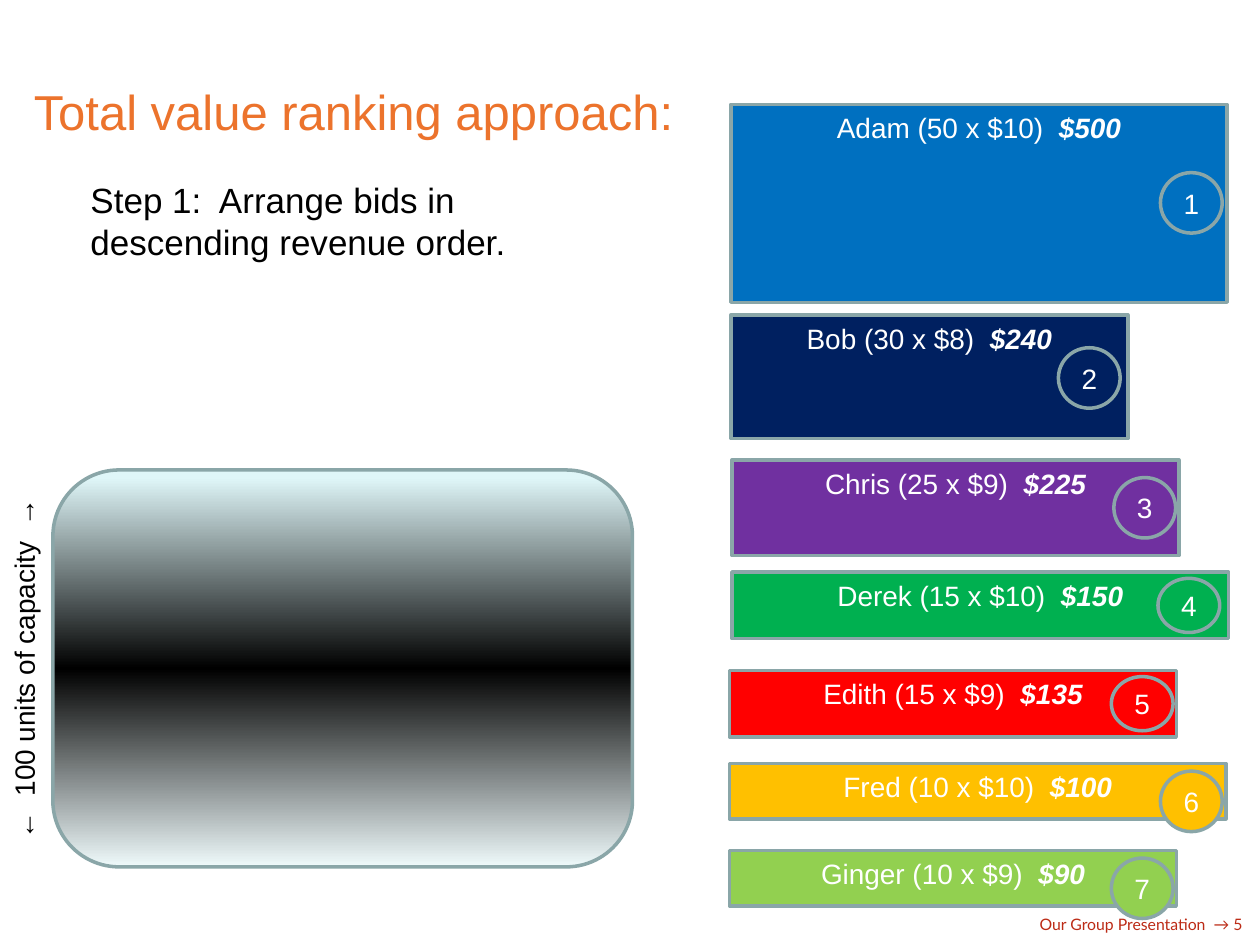
from copy import deepcopy
from dataclasses import dataclass

from pptx import Presentation
from pptx.dml.color import RGBColor
from pptx.enum.shapes import MSO_SHAPE
from pptx.enum.text import MSO_ANCHOR, PP_ALIGN
from pptx.oxml.ns import qn
from pptx.util import Inches, Pt

RECTANGLE, ROUNDED, OVAL = MSO_SHAPE.RECTANGLE, MSO_SHAPE.ROUNDED_RECTANGLE, MSO_SHAPE.OVAL
LEFT, CENTER, RIGHT = PP_ALIGN.LEFT, PP_ALIGN.CENTER, PP_ALIGN.RIGHT
TOP, MIDDLE, BOTTOM = MSO_ANCHOR.TOP, MSO_ANCHOR.MIDDLE, MSO_ANCHOR.BOTTOM


@dataclass(frozen=True)
class Theme:
    font: str = "Arial"
    footer_font: str = "Lato"
    title_size: int = 28
    body_size: int = 20
    label_size: int = 16
    footer_size: int = 9
    title: str = "EC732C"
    text: str = "000000"
    on_fill: str = "FFFFFF"
    outline: str = "8AA6A8"
    footer: str = "BC2B16"
    line_width: int = 2
    capacity_stops: tuple = ((0.02, "DFF6F8"), (0.5, "000000"), (1, "EFFAFB"))


@dataclass(frozen=True)
class Box:
    left: float
    top: float
    width: float
    height: float

    def inches(self) -> tuple:
        return tuple(Inches(n) for n in (self.left, self.top, self.width, self.height))


@dataclass(frozen=True)
class Bid:
    bidder: str
    quantity: int
    price: int
    color: str
    left: float
    top: float
    height: float
    badge_left: float
    badge_top: float
    badge_height: float = 0.48


THEME = Theme()
WIDTH_PER_DOLLAR = 0.394
BADGE_WIDTH = 0.49

BIDS = (
    Bid("Adam", 50, 10, "0070C0", 5.8, 0.83, 1.57, 9.21, 1.37),
    Bid("Bob", 30, 8, "002060", 5.8, 2.5, 0.98, 8.4, 2.76),
    Bid("Chris", 25, 9, "7030A0", 5.81, 3.65, 0.76, 8.84, 3.79),
    Bid("Derek", 15, 10, "00B050", 5.81, 4.54, 0.53, 9.19, 4.59, 0.43),
    Bid("Edith", 15, 9, "FF0000", 5.79, 5.32, 0.53, 8.82, 5.37, 0.43),
    Bid("Fred", 10, 10, "FFC000", 5.79, 6.06, 0.44, 9.21, 6.12),
    Bid("Ginger", 10, 9, "92D050", 5.79, 6.75, 0.44, 8.82, 6.81),
)


def rgb(color: str) -> RGBColor:
    return RGBColor.from_string(color)


def write(shape, text: str, size: int, color: str, align=LEFT, anchor=TOP, font=THEME.font):
    """Fill the shape's single paragraph and return it."""
    frame = shape.text_frame
    frame.word_wrap = True
    frame.vertical_anchor = anchor
    paragraph = frame.paragraphs[0]
    paragraph.alignment = align
    paragraph.add_run().text = text
    paragraph.font.name = font
    paragraph.font.size = Pt(size)
    paragraph.font.color.rgb = rgb(color)
    return paragraph


def add_outlined(shapes, kind, box: Box):
    shape = shapes.add_shape(kind, *box.inches())
    shape.shadow.inherit = False
    shape.line.color.rgb = rgb(THEME.outline)
    shape.line.width = Pt(THEME.line_width)
    return shape


def add_filled(shapes, kind, box: Box, color: str):
    shape = add_outlined(shapes, kind, box)
    shape.fill.solid()
    shape.fill.fore_color.rgb = rgb(color)
    return shape


def add_bid(slide, rank: int, bid: Bid) -> None:
    """Draw a bar as wide as its price, with the rank in a badge."""
    group = slide.shapes.add_group_shape()
    bar_box = Box(bid.left, bid.top, bid.price * WIDTH_PER_DOLLAR, bid.height)
    bar = add_filled(group.shapes, RECTANGLE, bar_box, bid.color)
    label = f"{bid.bidder} ({bid.quantity} x ${bid.price})  "
    paragraph = write(bar, label, THEME.label_size, THEME.on_fill, CENTER)
    total = paragraph.add_run()
    total.text = f"${bid.quantity * bid.price}"
    total.font.bold = total.font.italic = True

    badge_box = Box(bid.badge_left, bid.badge_top, BADGE_WIDTH, bid.badge_height)
    badge = add_filled(group.shapes, OVAL, badge_box, bid.color)
    write(badge, str(rank), THEME.label_size, THEME.on_fill, CENTER, MIDDLE)


def add_capacity(slide) -> None:
    block = add_outlined(slide.shapes, ROUNDED, Box(0.42, 3.73, 4.6, 3.15))
    block.fill.gradient()
    block.fill.gradient_angle = 270
    stop_list = block.fill._xPr.find(qn("a:gradFill")).find(qn("a:gsLst"))
    stop_list.append(deepcopy(stop_list[0]))
    for stop, (position, color) in zip(block.fill.gradient_stops, THEME.capacity_stops):
        stop.position = position
        stop.color.rgb = rgb(color)

    label = slide.shapes.add_textbox(*Box(-1.37, 5.11, 3.15, 0.4).inches())
    label.rotation = 270
    write(label, "←  100 units of capacity  →", THEME.label_size, THEME.text, CENTER)


def add_footer(slide) -> None:
    footer = slide.shapes.add_textbox(*Box(6.39, 7.02, 3.47, 0.39).inches())
    frame = footer.text_frame
    frame.margin_left = frame.margin_right = frame.margin_top = frame.margin_bottom = 0
    write(footer, "Our Group Presentation  → 5", THEME.footer_size, THEME.footer,
          RIGHT, BOTTOM, THEME.footer_font)


def main() -> None:
    presentation = Presentation()
    presentation.slide_width, presentation.slide_height = Inches(10), Inches(7.5)
    slide = presentation.slides.add_slide(presentation.slide_layouts[6])

    add_footer(slide)
    title = slide.shapes.add_textbox(*Box(0.18, 0.6, 8.2, 0.63).inches())
    title.text_frame.margin_left = Inches(0.1)
    title.left = Inches(0.17)
    write(title, "Total value ranking approach:", THEME.title_size, THEME.title)
    add_capacity(slide)
    step = slide.shapes.add_textbox(*Box(0.62, 1.37, 4.33, 0.77).inches())
    write(step, "Step 1:  Arrange bids in descending revenue order.",
          THEME.body_size, THEME.text)
    for rank, bid in enumerate(BIDS, start=1):
        add_bid(slide, rank, bid)

    presentation.save("out.pptx")


if __name__ == "__main__":
    main()
